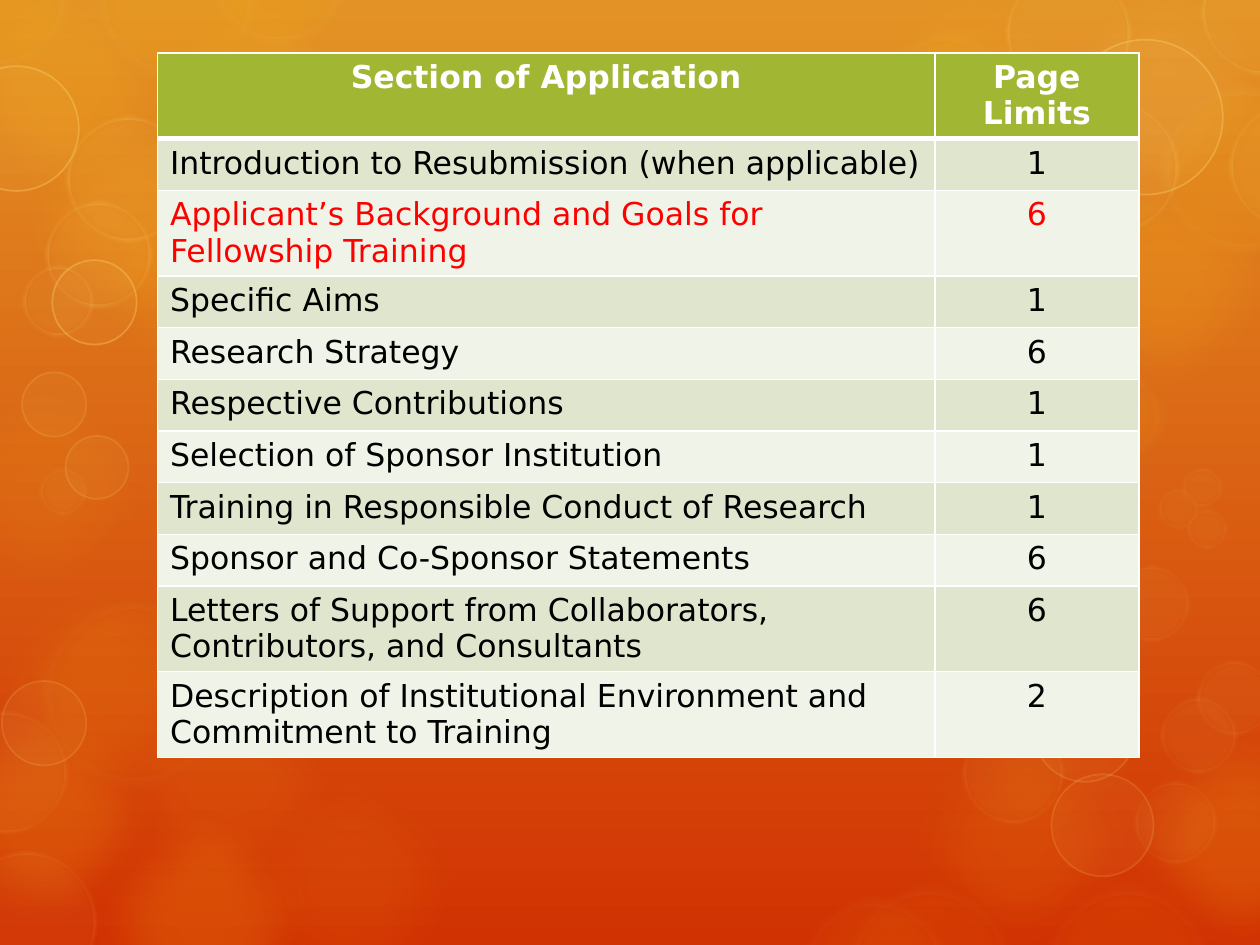
from lxml import etree
from pptx import Presentation
from pptx.dml.color import RGBColor
from pptx.enum.shapes import MSO_SHAPE as SHAPE
from pptx.enum.text import PP_ALIGN as ALIGN
from pptx.oxml.ns import qn
from pptx.util import Inches, Pt

ORANGE, RED_ORANGE = RGBColor(0xE3, 0x93, 0x25), RGBColor(0xD1, 0x32, 0x02)
GOLD, PALE, CREAM = (RGBColor(0xFD, 0xC6, 0x1B), RGBColor(0xFF, 0xE2, 0x81),
                     RGBColor(0xFE, 0xEB, 0xAE))
GREEN, BAND, LIGHT = (RGBColor(0xA1, 0xB6, 0x33), RGBColor(0xE0, 0xE5, 0xCE),
                      RGBColor(0xF0, 0xF3, 0xE8))
WHITE, BLACK, RED = (RGBColor(255, 255, 255), RGBColor(0, 0, 0),
                     RGBColor(255, 0, 0))
FONT = "DejaVu Sans"

prs = Presentation()
prs.slide_width, prs.slide_height = Inches(10), Inches(7.5)
U = prs.slide_width / 10  # the slide is a grid of 10 columns by 7.5 rows
s = prs.slides.add_slide(prs.slide_layouts[6])


def set_alpha(fill, percent):
    color = fill._xPr.find(qn("a:solidFill"))[0]
    etree.SubElement(color, qn("a:alpha")).set("val", str(percent * 1000))


def add_border(tc_pr, index, side, width):
    ln = etree.Element(qn("a:" + side), w=str(Pt(width)))
    solid = etree.SubElement(ln, qn("a:solidFill"))
    etree.SubElement(solid, qn("a:srgbClr")).set("val", str(WHITE))
    tc_pr.insert(index, ln)


# Background gradient, top to bottom
bg = s.background.fill
bg.gradient()
bg.gradient_angle = 270
for stop, color, position in zip(bg.gradient_stops, (ORANGE, RED_ORANGE), (0, 1)):
    stop.color.rgb = color
    stop.position = position

# Bubble groups: fill, alpha, rim (colour, points, alpha), soft edge in points,
# then circles as centre column, centre row, diameter
G = 2.09  # diameter of a large glow
BUBBLES = [
    (GOLD, 5, None, 25, [(8.33, 5.82, G)]),
    (GOLD, 8, None, 25, [(0.79, 5.46, G), (1.81, 6.28, G), (2.78, 7.01, G),
                         (0.35, 3.87, G)]),
    (GOLD, 10, None, 25, [(1.61, 2.24, G), (3.09, 1.35, G), (7.73, 0.75, G),
                          (8.1, 6.67, G), (7.42, 3.29, 1.33)]),
    (GOLD, 14, None, 25, [(0.49, 0.72, G)]),
    (GOLD, 15, None, 25, [(1.05, 1.76, G), (9.24, 2.24, G), (7.73, 1.9, G)]),
    (GOLD, 16, None, 25, [(1.61, 7.31, G), (9.85, 6.67, G), (0.36, 6.46, G)]),
    (GOLD, 20, None, 25, [(2.05, 0.86, G)]),
    (PALE, 10, None, 25, [(9.24, 0.72, G)]),
    (GOLD, 10, (CREAM, 14, 6), 10, [
        (9.87, 1.34, 1.37), (7.51, 0.8, 1.14), (8.19, 2.26, 1.33),
        (8.46, 2.81, 1.14), (8.87, 3.31, 0.79), (1.4, 0, 1.31),
        (2.21, -0.18, 1.14), (0, 0, 1.14)]),
    (GOLD, 6, (CREAM, 14, 4), 10, [
        (1.07, 5.5, 1.53), (6.94, 7.72, 1.24), (7.38, 7.69, 1.36),
        (8.95, 7.68, 1.34)]),
    (PALE, 5, (PALE, 5, 30), 4, [
        (1.02, 1.42, 1), (0.78, 2.02, 0.85), (0.46, 2.39, 0.57),
        (8.48, 0.26, 1), (10.03, 0.1, 1), (10.25, 1.32, 1), (8.83, 1.33, 1.06)]),
    (PALE, 5, (PALE, 5, 15), 4, [
        (0.21, 7.32, 1.13), (0.05, 6.13, 0.98), (8.04, 6.14, 0.81),
        (9.33, 6.53, 0.66), (9.14, 4.79, 0.61), (9.51, 5.84, 0.61),
        (9.8, 5.54, 0.61), (9.54, 3.87, 0.33), (9.35, 4.04, 0.33),
        (9.58, 4.2, 0.33), (0.5, 3.9, 0.39)]),
    (PALE, 5, (PALE, 1, 30), 0, [
        (0.13, 1.02, 0.99), (0.75, 2.4, 0.67), (9.09, 0.93, 1.23),
        (8.51, 1.79, 0.67)]),
    (PALE, 5, (PALE, 1, 15), 0, [
        (0.35, 5.74, 0.67), (8.75, 6.55, 0.81), (8.61, 5.8, 0.81),
        (0.43, 3.21, 0.51), (0.77, 3.71, 0.5)]),
]
for color, alpha, rim, soft, circles in BUBBLES:
    for cx, cy, d in circles:
        sp = s.shapes.add_shape(SHAPE.OVAL, int((cx - d / 2) * U),
                                int((cy - d / 2) * U), int(d * U), int(d * U))
        sp.shadow.inherit = False
        sp.fill.solid()
        sp.fill.fore_color.rgb = color
        set_alpha(sp.fill, alpha)
        if rim:
            rim_color, width, rim_alpha = rim
            sp.line.width = Pt(width)
            sp.line.color.rgb = rim_color
            set_alpha(sp.line.fill, rim_alpha)
        else:
            sp.line.fill.background()
        if soft:
            effects = sp._element.spPr.find(qn("a:effectLst"))
            etree.SubElement(effects, qn("a:softEdge")).set("rad", str(Pt(soft)))

# Page limits table
ROWS = [
    ("Section of Application", "Page Limits"),
    ("Introduction to Resubmission (when applicable)", "1"),
    ("Applicant’s Background and Goals for Fellowship Training", "6"),
    ("Specific Aims", "1"),
    ("Research Strategy", "6"),
    ("Respective Contributions", "1"),
    ("Selection of Sponsor Institution", "1"),
    ("Training in Responsible Conduct of Research", "1"),
    ("Sponsor and Co-Sponsor Statements", "6"),
    ("Letters of Support from Collaborators, Contributors, and Consultants", "6"),
    ("Description of Institutional Environment and Commitment to Training", "2"),
]
HIGHLIGHT = 2
ROW_H = 0.41
table = s.shapes.add_table(len(ROWS), 2, int(1.25 * U), int(0.42 * U),
                           int(7.79 * U), int(ROW_H * len(ROWS) * U)).table
for column, width in zip(table.columns, (6.17, 1.62)):
    column.width = int(width * U)
for i, row in enumerate(ROWS):
    header = i == 0
    table.rows[i].height = int(ROW_H * U)
    for j, text in enumerate(row):
        cell = table.cell(i, j)
        cell.fill.solid()
        cell.fill.fore_color.rgb = GREEN if header else BAND if i % 2 else LIGHT
        for k, side in enumerate(("lnL", "lnR", "lnT", "lnB")):
            thick = (header and side == "lnB") or (i == 1 and side == "lnT")
            add_border(cell._tc.tcPr, k, side, 3 if thick else 1)
        p = cell.text_frame.paragraphs[0]
        p.text = text
        p.alignment = ALIGN.CENTER if header or j else ALIGN.LEFT
        font = p.runs[0].font
        font.name, font.size, font.bold = FONT, Pt(18), header
        font.color.rgb = WHITE if header else RED if i == HIGHLIGHT else BLACK

prs.save("out.pptx")
